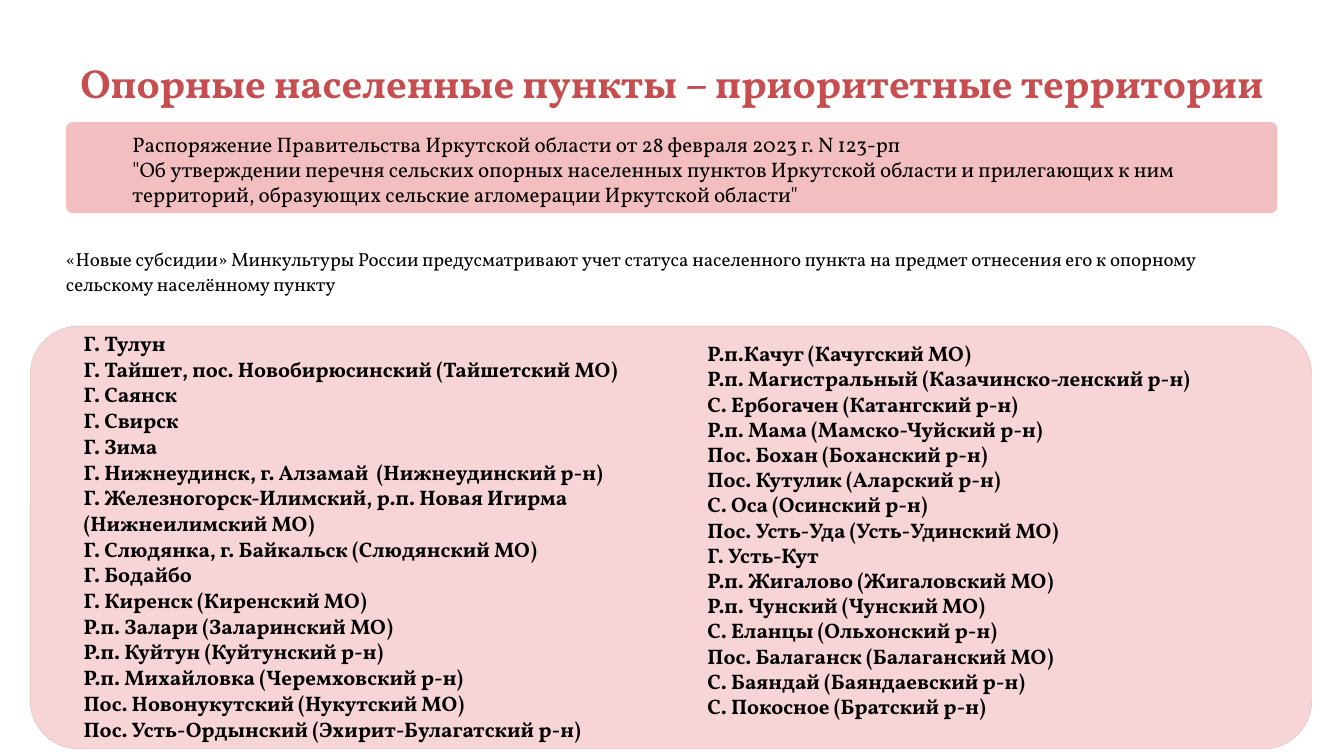
from dataclasses import dataclass
from typing import Optional

from pptx import Presentation
from pptx.dml.color import RGBColor
from pptx.enum.shapes import MSO_SHAPE
from pptx.enum.text import MSO_ANCHOR, MSO_AUTO_SIZE, PP_ALIGN
from pptx.util import Inches, Pt


@dataclass(frozen=True)
class Theme:
    font: str = "Vollkorn"
    ink: str = "000000"
    accent: str = "C64E50"
    banner: str = "F3BEC0"
    panel: str = "F7D4D5"
    edge: str = "DDBABB"
    head: float = 58
    body: float = 30
    note: float = 27


THEME = Theme()


@dataclass(frozen=True)
class Box:
    left: float
    top: float
    width: float
    height: float

    def place(self, shape) -> None:
        shape.left, shape.top = Inches(self.left), Inches(self.top)
        shape.width, shape.height = Inches(self.width), Inches(self.height)


@dataclass(frozen=True)
class Card:
    box: Box
    fill: str
    round: float
    edge: Optional[str] = None


@dataclass(frozen=True)
class Block:
    box: Box
    lines: tuple[str, ...]
    size: float = THEME.body
    bold: bool = False
    color: str = THEME.ink
    pitch: Optional[float] = None  # exact line spacing in points
    align: PP_ALIGN = PP_ALIGN.LEFT
    inset: bool = False
    wrap: bool = True


def draw_card(slide, card: Card) -> None:
    shape = slide.shapes.add_shape(MSO_SHAPE.ROUNDED_RECTANGLE, 0, 0, 0, 0)
    card.box.place(shape)
    shape.adjustments[0] = card.round
    shape.shadow.inherit = False
    shape.fill.solid()
    shape.fill.fore_color.rgb = RGBColor.from_string(card.fill)
    if card.edge:
        shape.line.color.rgb = RGBColor.from_string(card.edge)
        shape.line.width = Pt(0.6)
    else:
        shape.line.fill.background()


def add_run(para, text: str, block: Block) -> None:
    run = para.add_run()
    run.text = text
    font = run.font
    font.name, font.size, font.bold = THEME.font, Pt(block.size), block.bold
    font.color.rgb = RGBColor.from_string(block.color)


def fill_text(shape, block: Block) -> None:
    block.box.place(shape)
    frame = shape.text_frame
    frame.word_wrap = block.wrap
    frame.vertical_anchor = MSO_ANCHOR.TOP
    frame.auto_size = MSO_AUTO_SIZE.SHAPE_TO_FIT_TEXT if block.inset else MSO_AUTO_SIZE.NONE
    if not block.inset:
        frame.margin_left = frame.margin_right = 0
        frame.margin_top = frame.margin_bottom = 0
    for index, line in enumerate(block.lines):
        para = frame.add_paragraph() if index else frame.paragraphs[0]
        para.alignment = block.align
        if block.pitch:
            para.line_spacing = Pt(block.pitch)
        for part, text in enumerate(line.split("\n")):
            if part:
                para.add_line_break()
            add_run(para, text, block)


def draw_text(slide, block: Block) -> None:
    fill_text(slide.shapes.add_textbox(0, 0, 0, 0), block)


# Shared left edge and width of title, banner and note
EDGE, SPAN = 1.31, 24.04

TITLE = Block(
    Box(EDGE, 1.1, SPAN, 1.03),
    ("Опорные населенные пункты – приоритетные территории",),
    size=THEME.head, bold=True, color=THEME.accent, pitch=73.3,
    align=PP_ALIGN.CENTER, wrap=False,
)

CARDS = (
    Card(Box(EDGE, 2.42, SPAN, 1.81), THEME.banner, 0.076),
    Card(Box(0.6, 6.47, 25.43, 8.39), THEME.panel, 0.115, THEME.edge),
)

NOTE = Block(
    Box(EDGE, 4.87, SPAN, 1),
    ("«Новые субсидии» Минкультуры России предусматривают учет статуса населенного пункта "
     "на предмет отнесения его к опорному сельскому населённому пункту",),
    size=THEME.note, pitch=35.8,
)

DECREE = Block(
    Box(2.53, 2.56, 22.48, 1.62),
    ("Распоряжение Правительства Иркутской области от 28 февраля 2023 г. N 123-рп\n"
     "\"Об утверждении перечня сельских опорных населенных пунктов Иркутской области "
     "и прилегающих к ним территорий, образующих сельские агломерации Иркутской области\"",),
    inset=True,
)

TOWNS = Block(
    Box(1.66, 6.55, 12, 8.16),
    (
        "Г. Тулун",
        "Г. Тайшет, пос. Новобирюсинский (Тайшетский МО)",
        "Г. Саянск",
        "Г. Свирск",
        "Г. Зима",
        "Г. Нижнеудинск, г. Алзамай  (Нижнеудинский р-н)",
        "Г. Железногорск-Илимский, р.п. Новая Игирма",
        "(Нижнеилимский МО)",
        "Г. Слюдянка, г. Байкальск (Слюдянский МО)",
        "Г. Бодайбо",
        "Г. Киренск (Киренский МО)",
        "Р.п. Залари (Заларинский МО)",
        "Р.п. Куйтун (Куйтунский р-н)",
        "Р.п. Михайловка (Черемховский р-н)",
        "Пос. Новонукутский (Нукутский МО)",
        "Пос. Усть-Ордынский (Эхирит-Булагатский р-н)",
    ),
    bold=True, pitch=36.7, wrap=False,
)

VILLAGES = Block(
    Box(13.94, 6.71, 11.92, 7.67),
    (
        "Р.п.Качуг (Качугский МО)",
        "Р.п. Магистральный (Казачинско-ленский р-н)",
        "С. Ербогачен (Катангский р-н)",
        "Р.п. Мама (Мамско-Чуйский р-н)",
        "Пос. Бохан (Боханский р-н)",
        "Пос. Кутулик (Аларский р-н)",
        "С. Оса (Осинский р-н)",
        "Пос. Усть-Уда (Усть-Удинский МО)",
        "Г. Усть-Кут",
        "Р.п. Жигалово (Жигаловский МО)",
        "Р.п. Чунский (Чунский МО)",
        "С. Еланцы (Ольхонский р-н)",
        "Пос. Балаганск (Балаганский МО)",
        "С. Баяндай (Баяндаевский р-н)",
        "С. Покосное (Братский р-н)",
    ),
    bold=True, inset=True,
)


def main() -> None:
    deck = Presentation()
    deck.slide_width, deck.slide_height = Inches(26.67), Inches(15)
    slide = deck.slides.add_slide(deck.slide_layouts[5])

    # Heading
    fill_text(slide.shapes.title, TITLE)

    # Banner and panel behind the text
    for card in CARDS:
        draw_card(slide, card)

    # Decree, note and the two lists of places
    for block in (NOTE, TOWNS, DECREE, VILLAGES):
        draw_text(slide, block)

    deck.save("out.pptx")


if __name__ == "__main__":
    main()
